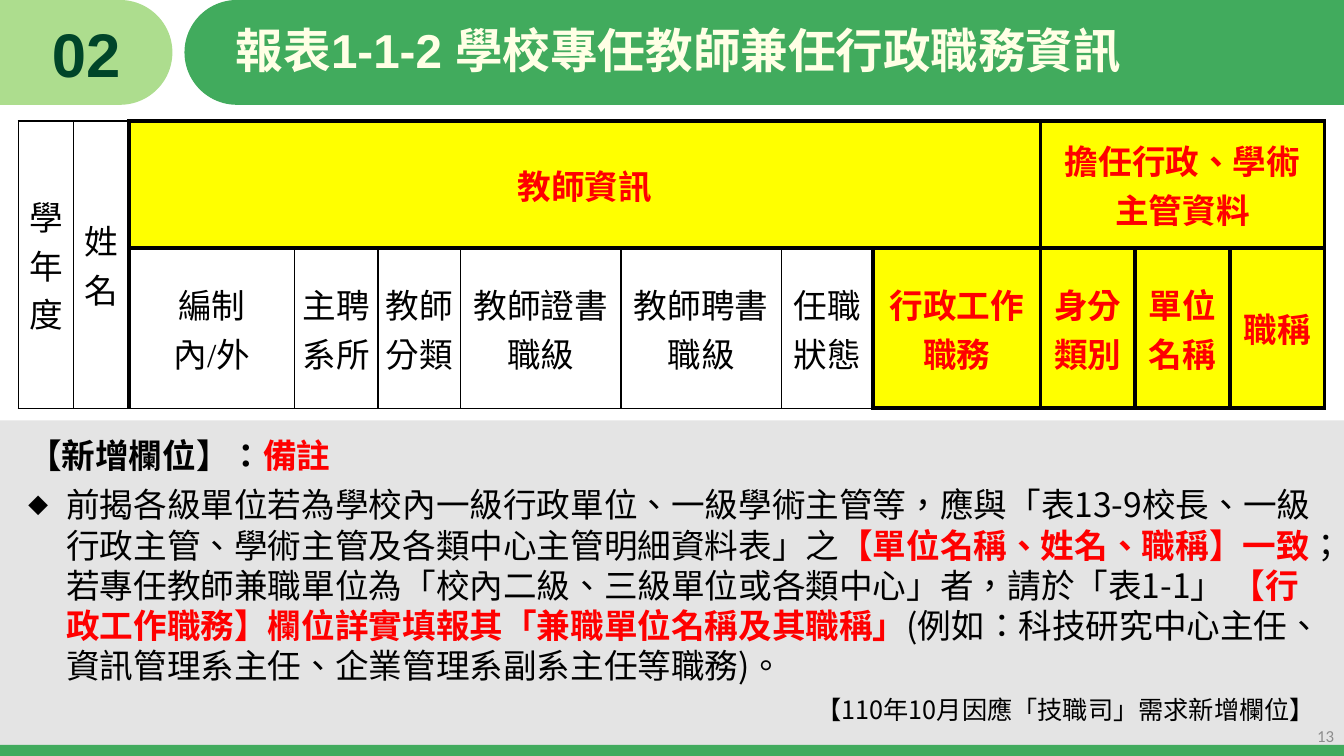
import dataclasses
import typing

import lxml.etree
import pptx
import pptx.dml.color
import pptx.enum.shapes
import pptx.enum.text
import pptx.oxml.ns
import pptx.util

Inches = pptx.util.Inches
Pt = pptx.util.Pt
Kind = pptx.enum.shapes.MSO_SHAPE
Align = pptx.enum.text.PP_ALIGN
Middle = pptx.enum.text.MSO_ANCHOR.MIDDLE
qn = pptx.oxml.ns.qn


@dataclasses.dataclass(frozen=True)
class Theme:
    green: str = "41AB5D"
    light: str = "ADDD8E"
    dark: str = "004529"
    cream: str = "FFFFE5"
    gray: str = "BFBFBF"
    faint: str = "8C8C8C"
    black: str = "000000"
    red: str = "FF0000"
    yellow: str = "FFFF00"
    head: str = "Arial"
    body: str = "Noto Sans CJK SC"
    serif: str = "Times New Roman"
    plain: str = "Calibri"
    big: float = 44
    title: float = 34
    text: float = 24
    note: float = 18
    tiny: float = 12
    thin: float = 1
    thick: float = 3


T = Theme()


class Box(typing.NamedTuple):
    left: float
    top: float
    width: float
    height: float


class Panel(typing.NamedTuple):
    kind: Kind
    box: Box
    fill: str
    alpha: int = 100


class Span(typing.NamedTuple):
    text: str
    hot: bool = False
    bold: bool = False


class Para(typing.NamedTuple):
    spans: list[Span]
    size: float = T.text
    align: Align = Align.LEFT
    mark: str = ""


class Cell(typing.NamedTuple):
    row: int
    col: int
    text: str
    rows: int = 1
    cols: int = 1
    hot: bool = False


PANELS = [
    Panel(Kind.RECTANGLE, Box(0, 4.17, 13.33, 3.33), T.gray, 41),
    Panel(Kind.RECTANGLE, Box(0, 7.39, 13.33, 0.11), T.green),
    Panel(Kind.RECTANGLE, Box(0, 0, 1.19, 1.04), T.light),
    Panel(Kind.OVAL, Box(0.67, 0, 1.04, 1.04), T.light),
    Panel(Kind.OVAL, Box(1.83, 0, 1.04, 1.04), T.green),
    Panel(Kind.RECTANGLE, Box(2.35, 0, 10.98, 1.04), T.green),
]

WIDTHS = [0.55, 0.55, 1.64, 0.83, 0.82, 1.59, 1.59, 0.91, 1.66, 0.94, 0.94, 0.94]
HEIGHTS = [1.26, 1.59]
FIELDS = ["編制\v內/外", "主聘系所", "教師分類", "教師證書職級", "教師聘書職級",
          "任職狀態", "行政工作職務", "身分類別", "單位名稱", "職稱"]
FIRST, HOT = 2, 8
CELLS = [
    Cell(0, 0, "學年度", rows=2),
    Cell(0, 1, "姓名", rows=2),
    Cell(0, FIRST, "教師資訊", cols=7, hot=True),
    Cell(0, 9, "擔任行政、學術\v主管資料", cols=3, hot=True),
] + [Cell(1, col, text, hot=col >= HOT) for col, text in enumerate(FIELDS, FIRST)]

NOTES = [
    Para([Span("【新增欄位】：", bold=True), Span("備註", True, True)]),
    Para([
        Span("前揭各級單位若為學校內一級行政單位、一級學術主管等，應與「表13-9校長、一級"
             "行政主管、學術主管及各類中心主管明細資料表」之"),
        Span("【單位名稱、姓名、職稱】一致", True, True),
        Span("；若專任教師兼職單位為「校內二級、三級單位或各類中心」者，請於「表1-1」 "),
        Span("【行政工作職務】欄位詳實填報其「兼職單位名稱及其職稱」", True, True),
        Span("(例如：科技研究中心主任、資訊管理系主任、企業管理系副系主任等職務)。"),
    ], mark="◆"),
    Para([Span("【110年10月因應「技職司」需求新增欄位】")], T.note, Align.RIGHT),
]


def color(code: str) -> pptx.dml.color.RGBColor:
    return pptx.dml.color.RGBColor.from_string(code)


def place(box: Box) -> list[int]:
    return [Inches(n) for n in box]


def style(run, face: str, size: float, code: str, bold: bool = False) -> None:
    font = run.font
    font.name, font.size, font.bold = face, Pt(size), bold
    font.color.rgb = color(code)
    props = run._r.rPr
    props.set("lang", "zh-TW")
    props.set("altLang", "en-US")
    asian = lxml.etree.Element(qn("a:ea"), typeface=T.body)
    props.find(qn("a:latin")).addnext(asian)


def label(frame, text: str, align: Align, *look) -> None:
    frame.word_wrap = True
    frame.vertical_anchor = Middle
    frame.text = text
    para = frame.paragraphs[0]
    para.alignment = align
    for run in para.runs:
        style(run, *look)


def panel(slide, part: Panel) -> None:
    shape = slide.shapes.add_shape(part.kind, *place(part.box))
    shape.shadow.inherit = False
    shape.fill.solid()
    shape.fill.fore_color.rgb = color(part.fill)
    shape.line.fill.background()
    if part.alpha < 100:
        tint = shape._element.spPr.find(".//" + qn("a:srgbClr"))
        lxml.etree.SubElement(tint, qn("a:alpha"), val=str(part.alpha * 1000))


def edges(row: int, col: int) -> dict[str, float]:
    """Thin lines for the plain fields, thick ones around the rest."""
    sides = dict.fromkeys(["lnL", "lnR", "lnT", "lnB"], T.thick)
    if col < FIRST:
        sides = dict.fromkeys(sides, T.thin)
        if col == FIRST - 1:
            sides["lnR"] = T.thick
    elif row == 1 and col < HOT:
        sides["lnB"] = T.thin
        if col > FIRST:
            sides["lnL"] = T.thin
        if col < HOT - 1:
            sides["lnR"] = T.thin
    return sides


def border(cell, sides: dict[str, float]) -> None:
    props = cell._tc.get_or_add_tcPr()
    for spot, (tag, width) in enumerate(sides.items()):
        line = lxml.etree.Element(qn("a:" + tag), w=str(Pt(width)))
        fill = lxml.etree.SubElement(line, qn("a:solidFill"))
        lxml.etree.SubElement(fill, qn("a:srgbClr"), val=T.black)
        props.insert(spot, line)


def grid(slide, box: Box) -> None:
    table = slide.shapes.add_table(len(HEIGHTS), len(WIDTHS), *place(box)).table
    table.first_row = table.horz_banding = False
    for col, width in zip(table.columns, WIDTHS):
        col.width = Inches(width)
    for row, height in zip(table.rows, HEIGHTS):
        row.height = Inches(height)
    for row in range(len(HEIGHTS)):
        for col in range(len(WIDTHS)):
            cell = table.cell(row, col)
            cell.fill.background()
            border(cell, edges(row, col))
    for item in CELLS:
        cell = table.cell(item.row, item.col)
        if item.rows * item.cols > 1:
            cell.merge(table.cell(item.row + item.rows - 1, item.col + item.cols - 1))
        cell.margin_left = cell.margin_right = Inches(0.07)
        cell.margin_top = cell.margin_bottom = 0
        if item.hot:
            cell.fill.solid()
            cell.fill.fore_color.rgb = color(T.yellow)
        label(cell.text_frame, item.text, Align.CENTER, T.serif, T.text,
              T.red if item.hot else T.black, item.hot)
        cell.vertical_anchor = Middle


def notes(slide, box: Box) -> None:
    frame = slide.shapes.add_textbox(*place(box)).text_frame
    frame.word_wrap = True
    for spot, item in enumerate(NOTES):
        para = frame.add_paragraph() if spot else frame.paragraphs[0]
        para.alignment = item.align
        para.line_spacing, para.space_before = 1.0, Pt(6)
        for span in item.spans:
            run = para.add_run()
            run.text = span.text
            style(run, T.body, item.size, T.red if span.hot else T.black, span.bold)
        if item.mark:
            props = para._p.get_or_add_pPr()
            props.set("marL", str(Inches(0.38)))
            props.set("indent", str(Inches(-0.38)))
            lxml.etree.SubElement(props, qn("a:buSzPct"), val="60000")
            lxml.etree.SubElement(props, qn("a:buFont"), typeface=T.body)
            lxml.etree.SubElement(props, qn("a:buChar"), char=item.mark)


def main() -> None:
    deck = pptx.Presentation()
    deck.slide_width, deck.slide_height = Inches(13.33), Inches(7.5)
    slide = deck.slides.add_slide(deck.slide_layouts[5])

    # Backdrop and header band
    for part in PANELS:
        panel(slide, part)

    # Title, raised above the band
    title = slide.shapes.title
    title.left, title.top, title.width, title.height = place(Box(2.24, 0, 10.9, 1.05))
    label(title.text_frame, "報表1-1-2 學校專任教師兼任行政職務資訊", Align.LEFT,
          T.head, T.title, T.cream, True)
    title.text_frame.paragraphs[0].line_spacing = 0.9
    slide.shapes._spTree.append(title._element)

    # Section and page numbers
    mark = slide.shapes.add_textbox(*place(Box(0, 0, 1.71, 1.05)))
    label(mark.text_frame, "02", Align.CENTER, T.head, T.big, T.dark, True)
    page = slide.shapes.add_textbox(*place(Box(12.52, 7.1, 0.81, 0.4)))
    label(page.text_frame, "13", Align.RIGHT, T.plain, T.tiny, T.faint)

    # Field table and remarks
    grid(slide, Box(0.18, 1.2, 12.96, 2.85))
    notes(slide, Box(0.18, 4.27, 12.96, 3.23))
    deck.save("out.pptx")


if __name__ == "__main__":
    main()
